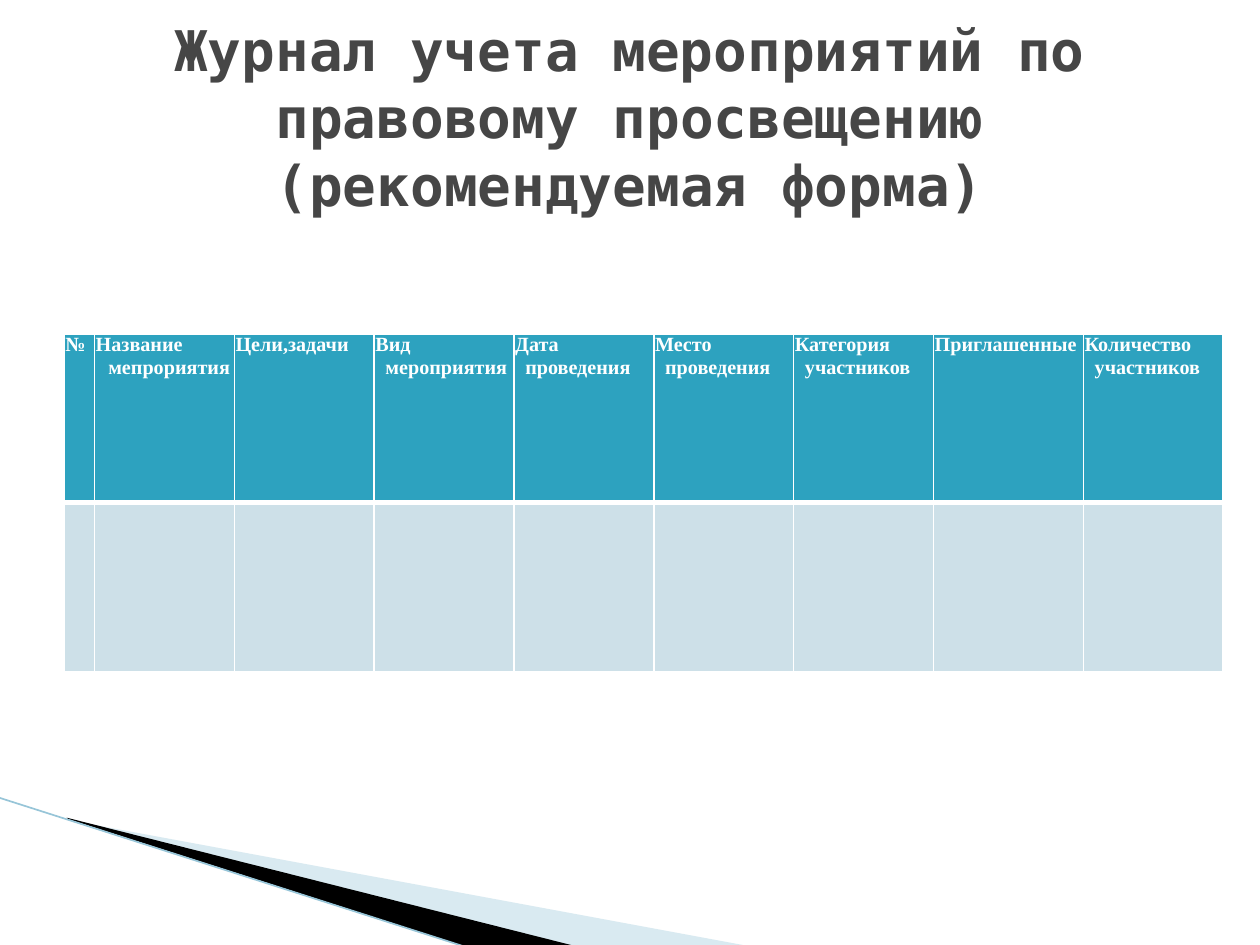
from dataclasses import dataclass

from lxml import etree
from pptx import Presentation
from pptx import util as u
from pptx.dml.color import RGBColor
from pptx.enum import shapes, text
from pptx.oxml import parse_xml
from pptx.oxml.ns import nsdecls, qn


@dataclass(frozen=True)
class Theme:
    ink: str = "464646"
    white: str = "FFFFFF"
    head: str = "2DA2BF"
    body: str = "CDE0E8"
    pale: str = "A0CBDC"
    dark: str = "000000"
    edge: str = "97C5D8"
    mono: str = "DejaVu Sans Mono"
    serif: str = "Times New Roman"
    big: float = 32
    small: float = 11.5


def put(obj, vals):
    for name, val in vals.items():
        setattr(obj, name, val)


class Deck:
    def __init__(self, theme):
        self.theme = theme
        self.prs = Presentation()
        put(self.prs, {"slide_width": u.Inches(10), "slide_height": u.Inches(7.5)})
        self.slide = self.prs.slides.add_slide(self.prs.slide_layouts[6])

    def font(self, para, face, size, color):
        put(para.font, {"name": face, "size": u.Pt(size), "bold": True})
        para.font.color.rgb = RGBColor.from_string(color)

    def wedge(self, points, color, alpha=None):
        pts = [(u.Inches(x), u.Inches(y)) for x, y in points]
        path = self.slide.shapes.build_freeform(*pts[0])
        path.add_line_segments(pts[1:], close=True)
        shape = path.convert_to_shape()
        shape.shadow.inherit = False
        shape.line.fill.background()
        shape.fill.solid()
        shape.fill.fore_color.rgb = RGBColor.from_string(color)
        if alpha:
            tone = shape._element.spPr.find(".//" + qn("a:srgbClr"))
            etree.SubElement(tone, qn("a:alpha"), val=str(alpha * 1000))

    def line(self, start, end, color, width):
        ends = [u.Inches(v) for v in (*start, *end)]
        line = self.slide.shapes.add_connector(shapes.MSO_CONNECTOR.STRAIGHT, *ends)
        line.line.color.rgb = RGBColor.from_string(color)
        line.line.width = u.Pt(width)
        etree.SubElement(line._element.spPr, qn("a:effectLst"))

    def title(self, words, box):
        frame = self.slide.shapes.add_textbox(*map(u.Inches, box)).text_frame
        put(frame, {"word_wrap": True, "vertical_anchor": text.MSO_ANCHOR.MIDDLE})
        para = frame.paragraphs[0]
        para.text = words
        para.alignment = text.PP_ALIGN.CENTER
        self.font(para, self.theme.mono, self.theme.big, self.theme.ink)

    def cell(self, cell, fill, widths):
        # Borders come before the fill in the cell properties
        props = cell._tc.get_or_add_tcPr()
        for side, width in widths.items():
            props.append(parse_xml(
                f'<a:ln{side} {nsdecls("a")} w="{u.Pt(width)}"><a:solidFill>'
                f'<a:srgbClr val="{self.theme.white}"/></a:solidFill></a:ln{side}>'))
        cell.fill.solid()
        cell.fill.fore_color.rgb = RGBColor.from_string(fill)
        thin = u.Inches(0.01)
        put(cell, {"margin_left": thin, "margin_right": thin,
                   "margin_top": 0, "margin_bottom": 0})

    def table(self, heads, cols, high, left, top):
        box = map(u.Inches, (left, top, sum(cols), 2 * high))
        grid = self.slide.shapes.add_table(2, len(cols), *box).table
        put(grid, {"first_row": False, "horz_banding": False})
        for row in grid.rows:
            row.height = u.Inches(high)
        for i, (head, width) in enumerate(zip(heads, cols)):
            grid.columns[i].width = u.Inches(width)
            top_cell = grid.cell(0, i)
            # The rule between the two rows is the thick one
            self.cell(top_cell, self.theme.head, {"L": 1, "R": 1, "T": 1, "B": 3})
            self.cell(grid.cell(1, i), self.theme.body, {"L": 1, "R": 1, "T": 3, "B": 1})
            para = top_cell.text_frame.paragraphs[0]
            para.text = head
            hang = {0: 0.03, 1: 0.1}.get(i, 0.08)
            ppr = para._p.get_or_add_pPr()
            ppr.set("marL", str(u.Inches(hang)))
            ppr.set("indent", str(u.Inches(-0.99)))
            self.font(para, self.theme.serif, self.theme.small, self.theme.white)


def main():
    look = Theme()
    deck = Deck(look)

    # Corner decoration
    deck.wedge([(0.55, 6.51), (5.95, 7.51), (4.56, 7.51), (0.55, 6.5)], look.pale, 40)
    deck.wedge([(0.53, 6.49), (4.57, 7.51), (3.72, 7.52), (0.54, 6.5)], look.dark)
    deck.line((-0.01, 6.33), (3.71, 7.52), look.edge, 0.95)

    # Event log
    heads = ["№", "Название мепрориятия", "Цели,задачи", "Вид мероприятия",
             "Дата проведения", "Место проведения", "Категория участников",
             "Приглашенные", "Количество участников"]
    cols = [0.24] + [1.11] * 6 + [1.19, 1.11]
    deck.table(heads, cols, 1.34, 0.51, 2.65)

    # Title
    deck.title("Журнал учета мероприятий по правовому просвещению\v(рекомендуемая форма)",
               (0.5, 0.3, 9, 1.25))

    deck.prs.save("out.pptx")


if __name__ == "__main__":
    main()
